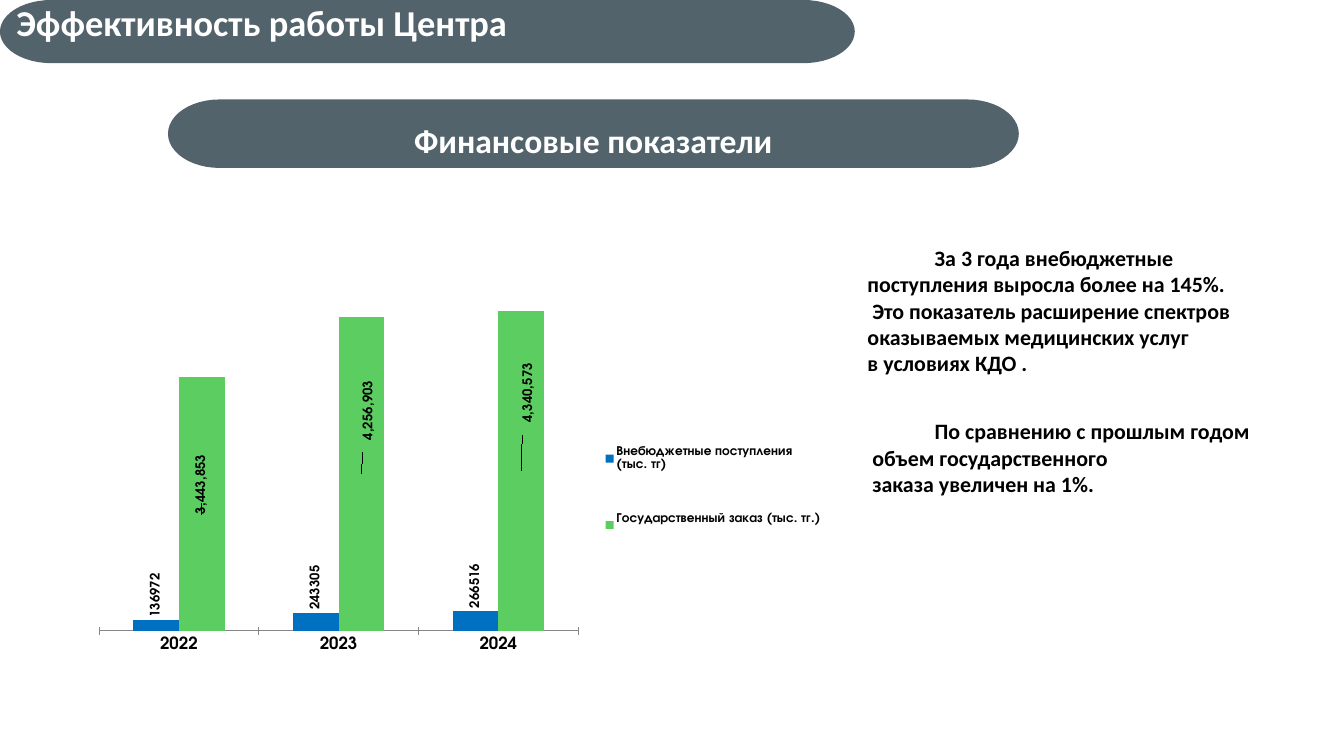
import copy
import math
import pptx
import pptx.chart.data
import pptx.dml.color
import pptx.enum.chart
import pptx.enum.text
import pptx.oxml
import pptx.oxml.ns
import pptx.util
from lxml import etree

Cm = pptx.util.Cm
Pt = pptx.util.Pt
qn = pptx.oxml.ns.qn
Align = pptx.enum.text.PP_ALIGN
XL = pptx.enum.chart


def color(value):
    return pptx.dml.color.RGBColor.from_string(value)


class Deck:
    TEXT_FONT = "Calibri"
    CHART_FONT = "TeX Gyre Adventor"
    SLATE = "41535C"
    WHITE = "FFFFFF"
    BLACK = "000000"
    AXIS = "868686"

    def __init__(self, slide):
        self.s = slide

    def style(self, font, size, value, name=TEXT_FONT):
        font.name = name
        font.size = Pt(size)
        font.bold = True
        font.color.rgb = color(value)

    def add_run(self, p, text, size, value):
        r = p.add_run()
        r.text = text
        self.style(r.font, size, value)

    def banner(self, x, y, w, h, text, size, align, left=0, top=0):
        rx, ry, steps = 1.95, h / 2, 24
        arc = [math.pi * (i / steps - 0.5) for i in range(steps + 1)]
        right = [(x + w - rx + rx * math.cos(a), y + ry + ry * math.sin(a)) for a in arc]
        outline = right + [(2 * x + w - px, 2 * y + h - py) for px, py in right]
        points = [(Cm(px), Cm(py)) for px, py in outline]
        fb = self.s.shapes.build_freeform(*points[0])
        fb.add_line_segments(points[1:], close=True)
        sp = fb.convert_to_shape()
        sp.shadow.inherit = False
        sp.line.fill.background()
        sp.fill.solid()
        sp.fill.fore_color.rgb = color(self.SLATE)
        fill = sp._element.spPr.find(qn("a:solidFill"))
        etree.SubElement(fill[0], qn("a:alpha"), val="90000")
        tf = sp.text_frame
        tf.vertical_anchor = pptx.enum.text.MSO_ANCHOR.TOP
        tf.margin_left, tf.margin_top = Cm(left), Cm(top)
        tf.margin_right = tf.margin_bottom = 0
        tf.word_wrap = True
        p = tf.paragraphs[0]
        p.alignment = align
        self.add_run(p, text, size, self.WHITE)

    def text(self, x, y, w, h, lines):
        tf = self.s.shapes.add_textbox(Cm(x), Cm(y), Cm(w), Cm(h)).text_frame
        tf.word_wrap = True
        for i, (indent, line) in enumerate(lines):
            p = tf.paragraphs[0] if i == 0 else tf.add_paragraph()
            p._p.get_or_add_pPr().set("indent", str(Cm(indent)))
            self.add_run(p, line, 23.5, self.BLACK)

    def layout(self, parent, index, **values):
        layout = etree.Element(qn("c:layout"))
        manual = etree.SubElement(layout, qn("c:manualLayout"))
        for tag, val in values.items():
            etree.SubElement(manual, qn("c:" + tag), val=str(val))
        for old in parent.findall(qn("c:layout")):
            parent.remove(old)
        parent.insert(index, layout)

    def labels(self, series, position, number_format, offsets):
        dl = series.data_labels
        dl.show_value = True
        dl.position = position
        dl.number_format = number_format
        dl.number_format_is_linked = False
        self.style(dl.font, 14, self.BLACK, self.CHART_FONT)
        root = dl._element
        body = root.find(qn("c:txPr")).find(qn("a:bodyPr"))
        body.set("rot", "-5400000")
        body.set("vert", "horz")
        parts = [e for e in root if e.tag != qn("c:showLeaderLines")]
        for i, (dx, dy) in enumerate(offsets):
            label = etree.Element(qn("c:dLbl"))
            etree.SubElement(label, qn("c:idx"), val=str(i))
            self.layout(label, 1, x=dx, y=dy)
            label.extend(copy.deepcopy(parts))
            root.insert(i, label)

    def chart(self, x, y, w, h, categories, series):
        data = pptx.chart.data.CategoryChartData()
        data.categories = categories
        for name, values, *_ in series:
            data.add_series(name, values)
        chart = self.s.shapes.add_chart(
            XL.XL_CHART_TYPE.COLUMN_CLUSTERED, Cm(x), Cm(y), Cm(w), Cm(h), data).chart
        self.style(chart.font, 18, self.BLACK, self.CHART_FONT)
        chart.has_title = False
        plot = chart.plots[0]
        plot.vary_by_categories = False
        plot.gap_width, plot.overlap = 150, 0
        for ser, (_, _, fill, position, number_format, offsets) in zip(plot.series, series):
            ser.format.fill.solid()
            ser.format.fill.fore_color.rgb = color(fill)
            self.labels(ser, position, number_format, offsets)
        axis = chart.value_axis
        axis.minimum_scale, axis.maximum_scale = 0, 5000000
        axis.has_major_gridlines = False
        axis.visible = False
        axis = chart.category_axis
        axis.major_tick_mark = XL.XL_TICK_MARK.CROSS
        axis.format.line.color.rgb = color(self.AXIS)
        self.style(axis.tick_labels.font, 18, self.BLACK, self.CHART_FONT)
        chart.has_legend = True
        legend = chart.legend
        legend.position = XL.XL_LEGEND_POSITION.RIGHT
        legend.include_in_layout = False
        self.style(legend.font, 14, self.BLACK, self.CHART_FONT)
        self.layout(legend._element, 1, xMode="edge", yMode="edge", x=0.71, y=0.4, w=0.29, h=0.33)
        area = chart._chartSpace.chart.plotArea
        self.layout(area, 0, layoutTarget="inner", xMode="edge", yMode="edge",
                    x=0.02, y=0.109, w=0.643, h=0.753)


def main():
    prs = pptx.Presentation()
    prs.slide_width, prs.slide_height = Cm(50.8), Cm(28.58)
    deck = Deck(prs.slides.add_slide(prs.slide_layouts[6]))
    deck.banner(0, 0, 32.31, 2.39, "Эффективность работы Центра", 39, Align.LEFT, left=0.62)
    deck.banner(6.35, 3.76, 32.16, 2.59, "Финансовые показатели", 36, Align.CENTER, top=0.78)
    position = XL.XL_LABEL_POSITION
    deck.chart(3.18, 7.92, 28.17, 18.47, ["2022", "2023", "2024"], [
        ("Внебюджетные поступления (тыс. тг)", [136972, 243305, 266516], "0070C0",
         position.OUTSIDE_END, "General", []),
        ("Государственный заказ (тыс. тг.)", [3443853, 4256903, 4340573], "5CCE61",
         position.CENTER, "#,##0", [(0, -0.04), (0.01, -0.13), (0.01, -0.16)]),
    ])
    deck.text(32.54, 9.12, 16.28, 9.3, [
        (2.54, "За 3 года внебюджетные"),
        (0, "поступления выросла более на 145%."),
        (0.18, "Это показатель расширение спектров"),
        (0, "оказываемых медицинских услуг"),
        (0, "в условиях КДО ."),
    ])
    deck.text(32.54, 15.67, 16.08, 4.57, [
        (2.54, "По сравнению с прошлым годом"),
        (0.18, "объем государственного"),
        (0.18, "заказа увеличен на 1%."),
    ])
    prs.save("out.pptx")


if __name__ == "__main__":
    main()
